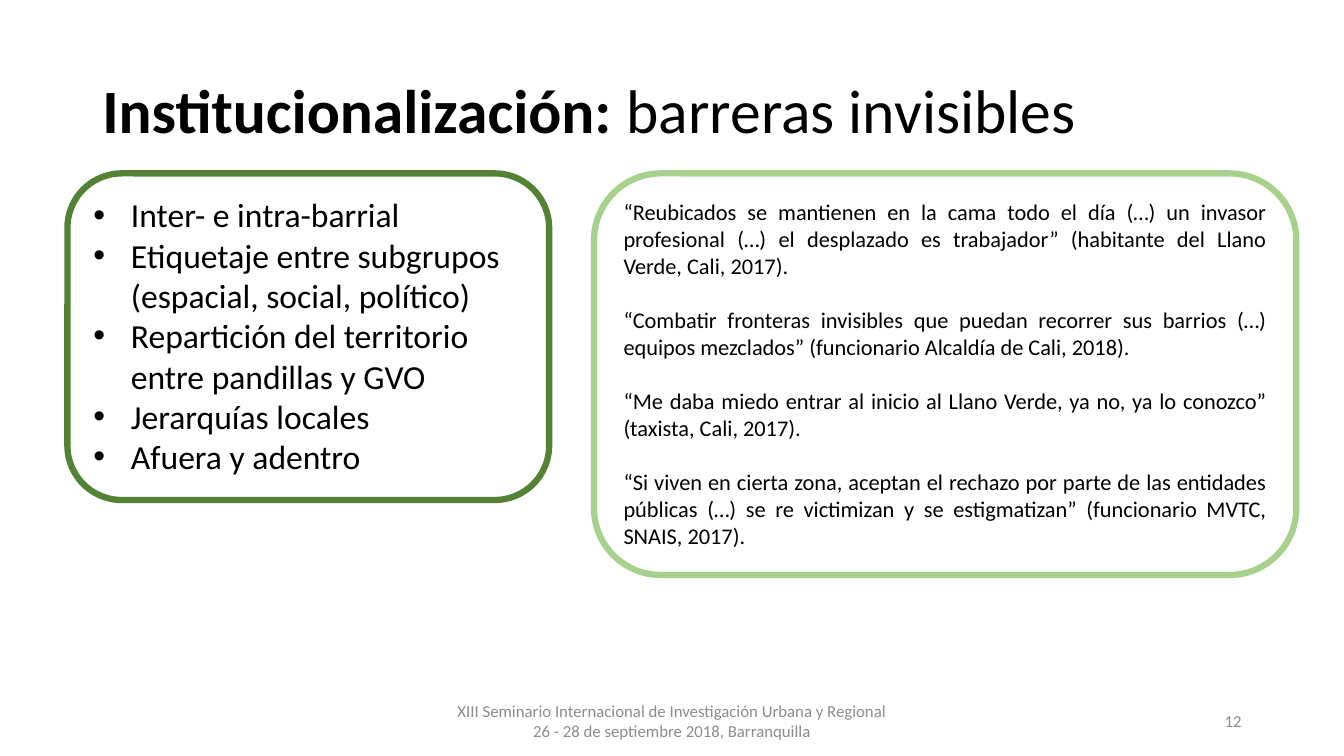
from lxml import etree
from pptx import Presentation
from pptx.dml.color import RGBColor
from pptx.enum.shapes import MSO_SHAPE
from pptx.enum.text import MSO_ANCHOR, PP_ALIGN as AL
from pptx.oxml.ns import qn
from pptx.util import Cm, Pt

# Content
TITLE = [("Institucionalización: ", True), ("barreras invisibles", False)]
FOOTER = ("XIII Seminario Internacional de Investigación Urbana y Regional "
          "26 - 28 de septiembre 2018, Barranquilla")
PAGE = "12"
BARRIERS = [
    "Inter- e intra-barrial",
    "Etiquetaje entre subgrupos (espacial, social, político)",
    "Repartición del territorio entre pandillas y GVO",
    "Jerarquías locales",
    "Afuera y adentro",
]
QUOTES = [
    "“Reubicados se mantienen en la cama todo el día (…) un invasor profesional (…) "
    "el desplazado es trabajador” (habitante del Llano Verde, Cali, 2017).",
    "“Combatir fronteras invisibles que puedan recorrer sus barrios (…) equipos "
    "mezclados” (funcionario Alcaldía de Cali, 2018).",
    "“Me daba miedo entrar al inicio al Llano Verde, ya no, ya lo conozco” "
    "(taxista, Cali, 2017).",
    "“Si viven en cierta zona, aceptan el rechazo por parte de las entidades públicas "
    "(…) se re victimizan y se estigmatizan” (funcionario MVTC, SNAIS, 2017).",
]
BLACK, GREY, GREEN, LIGHT_GREEN = "000000", "8C8C8C", "548235", "A9D18E"

# Layout in cm
BOX_TOP, FOOT_TOP, FOOT_H = 4.37, 17.65, 1.02
QUOTE_GAP = Pt(19.5)  # one line of 16 pt text
INDENT = Cm(0.95)


def color(value):
    return RGBColor.from_string(value)


def set_font(p, size, value):
    p.font.name, p.font.size = "Calibri", Pt(size)
    p.font.color.rgb = color(value)


def add_text(s, box, runs, size, value, align):
    tf = s.shapes.add_textbox(*map(Cm, box)).text_frame
    tf.word_wrap, tf.vertical_anchor = True, MSO_ANCHOR.MIDDLE
    p = tf.paragraphs[0]
    p.alignment = align
    set_font(p, size, value)
    for text, bold in runs:
        r = p.add_run()
        r.text, r.font.bold = text, bold
    return p


def add_panel(s, box, line, texts, size, align):
    sp = s.shapes.add_shape(MSO_SHAPE.ROUNDED_RECTANGLE, *map(Cm, box))
    sp.shadow.inherit = False
    sp.fill.background()
    sp.line.color.rgb, sp.line.width = color(line), Pt(4.5)
    tf = sp.text_frame
    tf.word_wrap, tf.vertical_anchor = True, MSO_ANCHOR.TOP
    tf.text = "\n".join(texts)
    for p in tf.paragraphs:
        p.alignment = align
        set_font(p, size, BLACK)
    return tf.paragraphs


def add_bullet(p):
    pPr = p._p.get_or_add_pPr()
    pPr.set("marL", str(INDENT))
    pPr.set("indent", str(-INDENT))
    font = etree.Element(qn("a:buFont"), typeface="Arial")
    char = etree.Element(qn("a:buChar"), char="•")
    pPr.insert_element_before(font, "a:defRPr")
    pPr.insert_element_before(char, "a:defRPr")


def main():
    prs = Presentation()
    prs.slide_width, prs.slide_height = Cm(33.87), Cm(19.05)
    s = prs.slides.add_slide(prs.slide_layouts[6])

    # Title, footer and page number
    title = add_text(s, (2.33, 1.01, 29.21, 3.68), TITLE, 44, BLACK, AL.LEFT)
    title.line_spacing = 0.9
    add_text(s, (11.22, FOOT_TOP, 11.43, FOOT_H), [(FOOTER, False)], 12, GREY, AL.CENTER)
    add_text(s, (23.92, FOOT_TOP, 7.62, FOOT_H), [(PAGE, False)], 12, GREY, AL.RIGHT)

    # Quotes on the right
    quotes = add_panel(s, (14.97, BOX_TOP, 17.7, 10.12), LIGHT_GREEN, QUOTES, 16, AL.JUSTIFY)
    for p in quotes[1:]:
        p.space_before = QUOTE_GAP

    # Barriers on the left
    for p in add_panel(s, (1.7, BOX_TOP, 12.14, 8.23), GREEN, BARRIERS, 24, AL.LEFT):
        add_bullet(p)

    prs.save("out.pptx")


if __name__ == "__main__":
    main()
